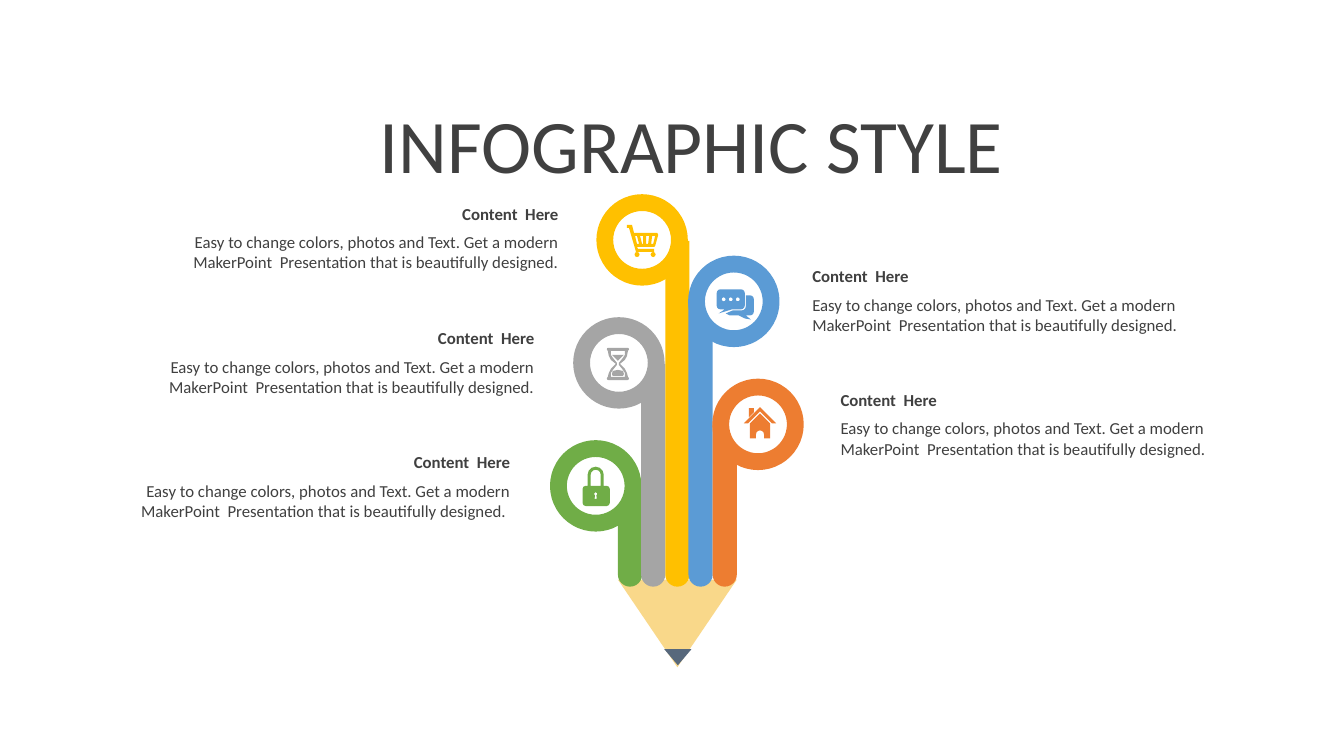
from math import cos, radians, sin

from lxml.etree import SubElement
from pptx import Presentation
from pptx.dml.color import RGBColor
from pptx.enum.shapes import MSO_SHAPE as SHAPE
from pptx.enum.text import MSO_ANCHOR as ANCHOR, PP_ALIGN as ALIGN
from pptx.oxml.ns import qn
from pptx.util import Pt

PX = 9144  # one px is a hundredth of an inch
WHITE = RGBColor(0xFF, 0xFF, 0xFF)
TEXT = RGBColor(0x40, 0x40, 0x40)
GREEN = RGBColor(0x70, 0xAD, 0x47)
GRAY = RGBColor(0xA5, 0xA5, 0xA5)
YELLOW = RGBColor(0xFF, 0xC0, 0x00)
BLUE = RGBColor(0x5B, 0x9B, 0xD5)
ORANGE = RGBColor(0xED, 0x7D, 0x31)
WOOD = RGBColor(0xF5, 0xB3, 0x17)
LEAD = RGBColor(0x57, 0x68, 0x7C)
BODY = ("Easy to change colors, photos and Text. Get a modern "
        "MakerPoint  Presentation that is beautifully designed.")


def arc(x, y, radius, start=0, end=360):
    """Points along a clockwise arc, in degrees from the right."""
    steps = round(abs(end - start) / (30 if radius > 3 else 45))
    angles = [radians(start + (end - start) * step / steps)
              for step in range(steps + 1)]
    return [(x + radius * cos(a), y + radius * sin(a)) for a in angles]


def rounded(left, top, right, bottom, radius, tail=()):
    """Outline of a rounded box, with an optional tail on its lower edge."""
    x1, x2 = left + radius, right - radius
    y1, y2 = top + radius, bottom - radius
    return [*arc(x1, y1, radius, 180, 270), *arc(x2, y1, radius, 270, 360),
            *arc(x2, y2, radius, 0, 90), *tail, *arc(x1, y2, radius, 90, 180)]


deck = Presentation()
deck.slide_width, deck.slide_height = Pt(960), Pt(540)
page = deck.slides.add_slide(deck.slide_layouts[6])

# Pencil: tip, then a coloured bar and ring for each item
parts = [
    (SHAPE.TRAPEZOID, (613, 575, 118, 87), WOOD, None, [0.789]),
    (SHAPE.ISOSCELES_TRIANGLE, (659, 644, 27, 16), LEAD, None, []),
]
for color, bar_left, bar_top, ring_left in [
    (GREEN, 613, 483, 554), (GRAY, 636, 361, 577), (YELLOW, 660, 239, 600),
    (BLUE, 683, 300, 691), (ORANGE, 707, 422, 715),
]:
    parts += [
        (SHAPE.ROUND_2_SAME_RECTANGLE, (bar_left, bar_top, 24, 582 - bar_top),
         color, None, [0.5, 0]),
        (SHAPE.OVAL, (ring_left, bar_top - 38, 74, 74), WHITE, color, []),
    ]
for kind, place, fill, outline, adjustments in parts:
    part = page.shapes.add_shape(kind, *[length * PX for length in place])
    part.shadow.inherit = False
    part.rotation = 180
    part.fill.solid()
    part.fill.fore_color.rgb = fill
    for index, value in enumerate(adjustments):
        part.adjustments[index] = value
    if outline is None:
        part.line.fill.background()
    else:
        part.line.color.rgb = outline
        part.line.width = Pt(12)
    if fill == WOOD:
        tint = part.fill._xPr.find(".//" + qn("a:srgbClr"))
        SubElement(tint, qn("a:alpha")).set("val", "50000")

# Title and the five texts
texts = [((53, 103, 1266, 79), "INFOGRAPHIC STYLE", ALIGN.CENTER,
          ANCHOR.MIDDLE, {"size": Pt(54)})]
for left, top, drop, align, ending in [
    (796, 259, 28, ALIGN.LEFT, ""), (824, 382, 28, ALIGN.LEFT, ""),
    (143, 197, 28, ALIGN.RIGHT, ""), (119, 320, 29, ALIGN.RIGHT, ""),
    (95, 443, 29, ALIGN.RIGHT, " "),
]:
    texts += [
        ((left, top, 421, 30), "Content  Here", align, ANCHOR.MIDDLE,
         {"size": Pt(12), "bold": True}),
        ((left, top + drop, 421, 50), BODY + ending, align, ANCHOR.TOP,
         {"size": Pt(12)}),
    ]
for place, words, align, anchor, style in texts:
    box = page.shapes.add_textbox(*[length * PX for length in place])
    box.text_frame.word_wrap = True
    box.text_frame.vertical_anchor = anchor
    para = box.text_frame.paragraphs[0]
    para.alignment = align
    span = para.add_run()
    span.text = words
    span.font.color.rgb = TEXT
    for name, value in {"name": "Calibri", **style}.items():
        setattr(span.font, name, value)

# Icons: closed outlines, where an inner one cuts a hole
chat = [
    rounded(711, 287, 739, 307, 4, [(726, 307), (713, 311), (719, 307)]),
    *[arc(x, 297, 2) for x in (718, 725, 732)],
    [(740, 293), *arc(744, 297, 4, 270, 360), *arc(744, 309, 4, 0, 90),
     (740, 313), (745, 317), (739, 316), (733, 313), (724, 313), (720, 311),
     (727, 308), *arc(736, 304, 4, 90, 0)],
]
hourglass = [rounded(602, top, 624, top + 3, 1.5) for top in (345, 374)]
for half in [
    [(603, 348), (604, 353), (606, 357), (611, 361), (606, 366), (604, 370),
     (603, 374)],
    [(606, 348), (606, 352), (608, 355), (612, 360), (612, 362), (608, 367),
     (606, 370), (606, 374)],
    [(607, 352), (609, 354), (613, 358)],
    [(613, 367), (608, 368), (607, 371), (608, 373)],
]:
    hourglass.append(half + [(1226 - x, y) for x, y in reversed(half)])
cart = [
    [(622, 223), (627, 223), (629, 231), (652, 231), (653, 233), (650, 244),
     (649, 245), (632, 245), (633, 247), (649, 247), (649, 250), (631, 250),
     (624, 226), (622, 226)],
    [(630, 234), (632, 242), (634, 242), (632, 234)],
    [(635, 234), (637, 242), (638, 242), (638, 234)],
    [(641, 234), (641, 242), (643, 242), (644, 234)],
    [(647, 234), (646, 242), (648, 242), (650, 234)],
    *[arc(x, 252.5, 2.5) for x in (632, 648)],
]
house = [
    [(754, 410), (764, 420), (764, 435), (758, 435),
     *arc(754, 431, 4, 360, 180), (750, 435), (744, 435), (744, 420)],
    [(743, 405), (748, 405), (748, 409), (743, 414)],
    [(754, 404), (770, 420), (766, 420), (754, 408), (742, 420), (738, 420)],
]
lock = [
    rounded(578, 482, 605, 502, 3),
    [(583, 482), *arc(591, 471, 8, 180, 360), (599, 482), (596, 482),
     *arc(591, 471, 5, 360, 180), (586, 482)],
    [*arc(591, 490, 1.5, 120, 420), (592, 495), (590, 495)],
]
for outlines, color in [(chat, BLUE), (hourglass, GRAY), (cart, YELLOW),
                        (house, ORANGE), (lock, GREEN)]:
    pen = None
    for outline in outlines:
        start, *rest = [(round(x * PX), round(y * PX)) for x, y in outline]
        if pen is None:
            pen = page.shapes.build_freeform(*start)
        else:
            pen.move_to(*start)
        pen.add_line_segments(rest, close=True)
    icon = pen.convert_to_shape()
    icon.shadow.inherit = False
    icon.fill.solid()
    icon.fill.fore_color.rgb = color
    icon.line.fill.background()

deck.save("out.pptx")
